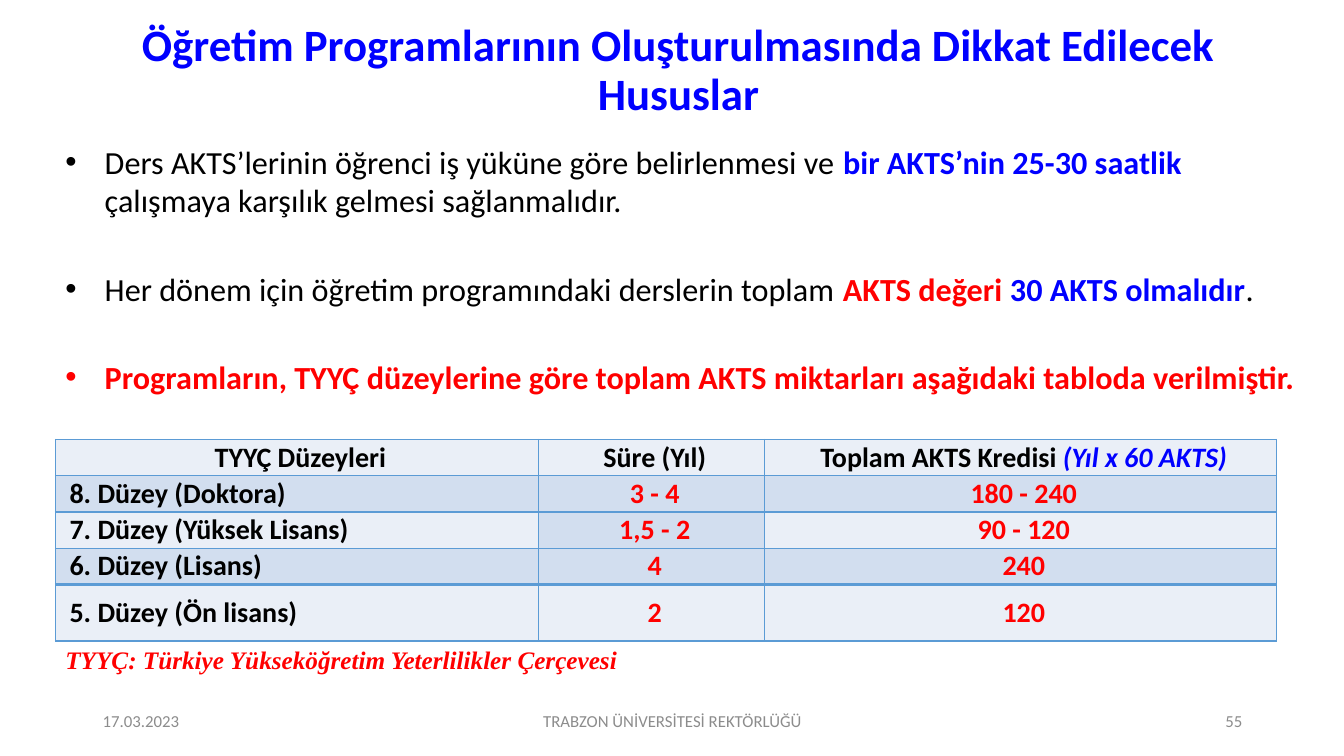
import pptx
import pptx.util
import pptx.dml.color
import pptx.enum.text
import pptx.oxml
import pptx.oxml.ns
import lxml.etree

Inches = pptx.util.Inches
Pt = pptx.util.Pt
ALIGN = pptx.enum.text.PP_ALIGN
MIDDLE = pptx.enum.text.MSO_ANCHOR.MIDDLE

COLORS = {
    "black": "000000",
    "blue": "0000FF",
    "red": "FF0000",
    "gray": "8C8C8C",
    "light": "EAEFF7",
    "dark": "D2DEEF",
    "edge": "5B9BD5",
}


def color(name):
    return pptx.dml.color.RGBColor.from_string(COLORS[name])


class Page:
    face = "Calibri"

    def __init__(self, deck):
        self.slide = deck.slides.add_slide(deck.slide_layouts[6])

    def style(self, font, tint, bold=False, italic=False):
        font.color.rgb = color(tint)
        font.bold = bold
        font.italic = italic

    def fill(self, para, runs, size, align=ALIGN.LEFT, face=None):
        para.alignment = align
        para.font.size = Pt(size)
        para.font.name = face or self.face
        for words, *look in runs:
            run = para.add_run()
            run.text = words
            if len(runs) > 1:
                self.style(run.font, *look)
        if len(runs) == 1:
            self.style(para.font, *runs[0][1:])

    def text(self, box, runs, size, align=ALIGN.LEFT, face=None, wrap=True, anchor=None):
        frame = self.slide.shapes.add_textbox(*map(Inches, box)).text_frame
        frame.word_wrap = wrap
        if anchor is not None:
            frame.vertical_anchor = anchor
        para = frame.paragraphs[0]
        self.fill(para, runs, size, align, face)
        return para

    def list(self, box, items, size, gap):
        frame = self.slide.shapes.add_textbox(*map(Inches, box)).text_frame
        frame.word_wrap = True
        for i, runs in enumerate(items):
            para = frame.add_paragraph() if i else frame.paragraphs[0]
            para.space_after = Pt(gap)
            props = para._p.get_or_add_pPr()
            props.set("marL", str(Inches(0.39)))
            props.set("indent", str(-Inches(0.39)))
            font = lxml.etree.SubElement(props, pptx.oxml.ns.qn("a:buFont"))
            font.set("typeface", "Arial")
            mark = lxml.etree.SubElement(props, pptx.oxml.ns.qn("a:buChar"))
            mark.set("char", "•")
            self.fill(para, runs, size)

    def edges(self, cell, top):
        props = cell._tc.get_or_add_tcPr()
        for side, width in (("L", 1), ("R", 1), ("T", top), ("B", 1)):
            props.append(pptx.oxml.parse_xml(
                f'<a:ln{side} {pptx.oxml.ns.nsdecls("a")} w="{Pt(width)}"><a:solidFill>'
                f'<a:srgbClr val="{COLORS["edge"]}"/></a:solidFill></a:ln{side}>'))

    def table(self, box, wide, high, rows, fills, size):
        grid = self.slide.shapes.add_table(len(rows), len(wide), *map(Inches, box)).table
        for col, width in zip(grid.columns, wide):
            col.width = Inches(width)
        for r, (row, height) in enumerate(zip(rows, high)):
            grid.rows[r].height = Inches(height)
            for c, runs in enumerate(row):
                cell = grid.cell(r, c)
                cell.margin_left = Inches(0.14)
                cell.margin_right = Inches(0.07)
                cell.margin_top = cell.margin_bottom = 0
                cell.vertical_anchor = MIDDLE
                self.edges(cell, 2 if r == len(rows) - 1 else 1)
                cell.fill.solid()
                cell.fill.fore_color.rgb = color(fills[r][c])
                align = ALIGN.LEFT if r and c == 0 else ALIGN.CENTER
                self.fill(cell.text_frame.paragraphs[0], runs, size, align)


def main():
    deck = pptx.Presentation()
    deck.slide_width = Inches(13.33)
    deck.slide_height = Inches(7.5)
    page = Page(deck)

    title = page.text(
        (1.04, 0.16, 11.38, 1.1),
        [("Öğretim Programlarının Oluşturulmasında Dikkat Edilecek Hususlar", "blue", True)],
        32, ALIGN.CENTER, anchor=MIDDLE)
    title.line_spacing = 0.9

    page.list((0.55, 1.36, 12.51, 2.79), [
        [("Ders AKTS’lerinin öğrenci iş yüküne göre belirlenmesi ve ", "black"),
         ("bir AKTS’nin 25-30 saatlik ", "blue", True),
         ("çalışmaya karşılık gelmesi sağlanmalıdır.", "black")],
        [("Her dönem için öğretim programındaki derslerin toplam ", "black"),
         ("AKTS değeri ", "red", True),
         ("30 AKTS olmalıdır", "blue", True),
         (".", "black")],
        [("Programların, TYYÇ düzeylerine göre toplam AKTS miktarları "
          "aşağıdaki tabloda verilmiştir.", "red", True)],
    ], 23, 35.5)

    head = [
        [("TYYÇ Düzeyleri", "black", True)],
        [("Süre (Yıl)", "black", True)],
        [("Toplam AKTS Kredisi ", "black", True), ("(Yıl x 60 AKTS)", "blue", True, True)],
    ]
    levels = [
        ("8. Düzey (Doktora)", "3 - 4", "180 - 240"),
        ("7. Düzey (Yüksek Lisans)", "1,5 - 2", "90 - 120"),
        ("6. Düzey (Lisans)", "4", "240"),
        ("5. Düzey (Ön lisans)", "2", "120"),
    ]
    rows = [head] + [
        [[(words, "red" if c else "black", True)] for c, words in enumerate(level)]
        for level in levels]
    fills = [["dark" if r % 2 else "light"] * 3 for r in range(len(rows))]
    fills[2][1] = "dark"
    page.table((0.55, 4.36, 12.11, 2), (4.79, 2.24, 5.08),
               [0.36] * 4 + [0.56], rows, fills, 20)

    page.text((0.55, 6.34, 5.73, 0.4),
              [("TYYÇ: Türkiye Yükseköğretim Yeterlilikler Çerçevesi", "red", True, True)],
              18, face="Times New Roman", wrap=False)

    for left, width, words, align in (
            (0.92, 3, "17.03.2023", ALIGN.LEFT),
            (4.42, 4.5, "TRABZON ÜNİVERSİTESİ REKTÖRLÜĞÜ", ALIGN.CENTER),
            (9.42, 3, "55", ALIGN.RIGHT)):
        page.text((left, 6.95, width, 0.4), [(words, "gray")], 12, align, anchor=MIDDLE)

    deck.save("out.pptx")


if __name__ == "__main__":
    main()
